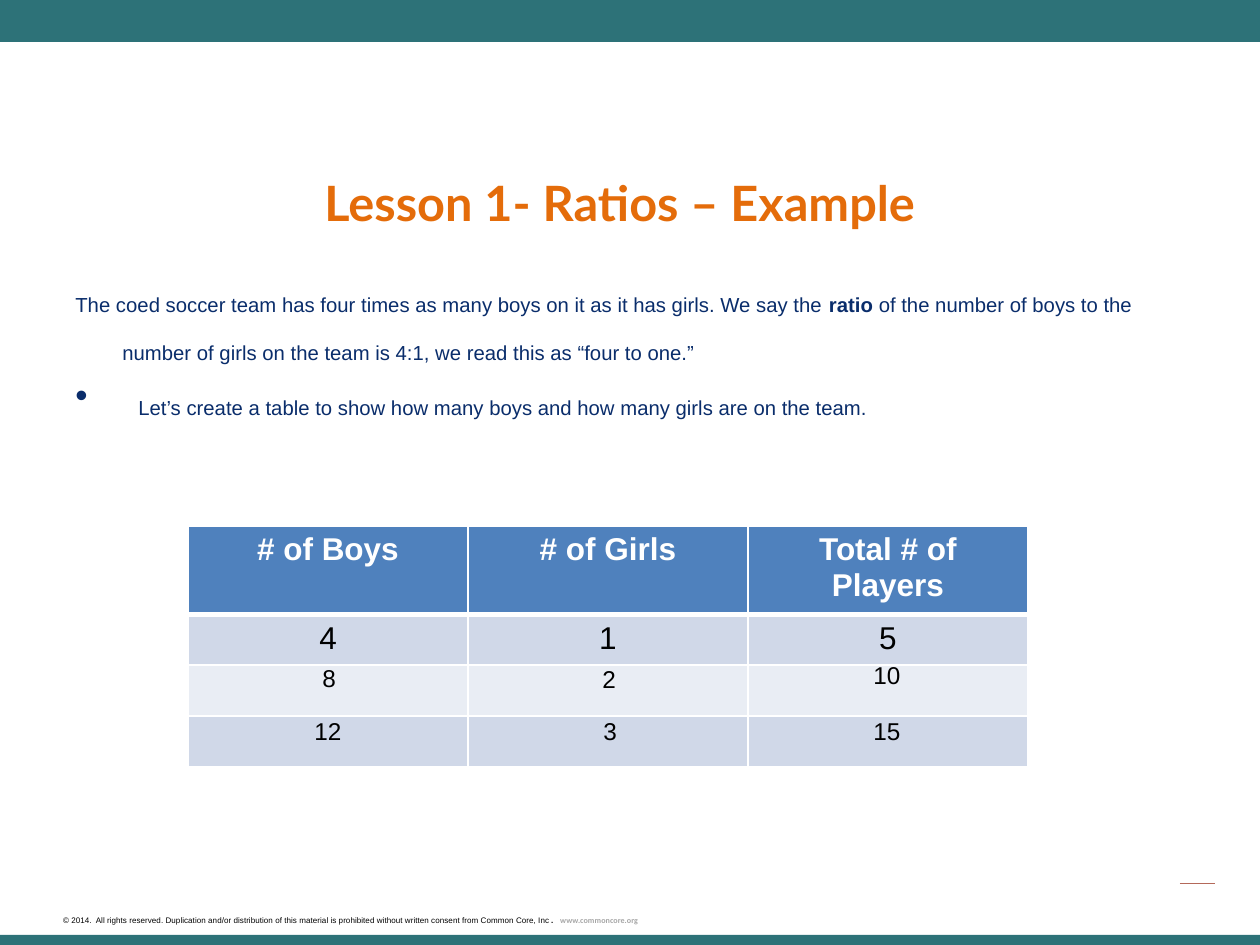
import pptx
import pptx.util
import pptx.dml.color
import pptx.enum.shapes
import pptx.enum.text
import pptx.oxml
import pptx.oxml.ns

EMU_PER_PX = 914400 / 126
TEAL, ORANGE, NAVY = "2D7278", "E46C0A", "0A2D6B"
BLACK, WHITE, GRAY = "000000", "FFFFFF", "A6A6A6"
HEADER_FILL, BAND_FILLS = "4F81BD", ("D0D8E8", "E9EDF4")
SUBSCRIPT = "-25000"
HEADINGS = ("# of Boys", "# of Girls", "Total # of Players")
FIRST_RATIO = ("4", "1", "5")
LATER_RATIOS = (
    ("8", 310, 629), ("2", 590, 630), ("10", 861, 626),
    ("12", 302, 682), ("3", 591, 682), ("15", 861, 682),
)


def px(length):
    """Turn pixels into EMU."""
    return pptx.util.Emu(round(length * EMU_PER_PX))


def color(value):
    """Turn a hex string into a colour."""
    return pptx.dml.color.RGBColor.from_string(value)


def element(tag, **attributes):
    """Make a drawing element with the given attributes."""
    made = pptx.oxml.parse_xml(f"<a:{tag} {pptx.oxml.ns.nsdecls('a')}/>")
    for key, value in attributes.items():
        made.set(key, str(value))
    return made


def style(run, size, font, hue, bold=False, lowered=True):
    """Format one run of text."""
    run.font.size = pptx.util.Pt(size)
    run.font.name = font
    run.font.color.rgb = color(hue)
    run.font.bold = bold
    if lowered:
        run.font._element.set("baseline", SUBSCRIPT)


def add_run(paragraph, text, *look, **options):
    """Append a formatted run to a paragraph."""
    run = paragraph.add_run()
    run.text = text
    style(run, *look, **options)


def add_text_frame(slide, left, top, width, height):
    """Add a wrapping text box and return its frame."""
    frame = slide.shapes.add_textbox(px(left), px(top), px(width), px(height)).text_frame
    frame.word_wrap = True
    return frame


def add_bar(slide, left, top, width, height):
    """Add a plain teal bar."""
    bar = slide.shapes.add_shape(
        pptx.enum.shapes.MSO_SHAPE.RECTANGLE, px(left), px(top), px(width), px(height))
    bar.shadow.inherit = False
    bar.fill.solid()
    bar.fill.fore_color.rgb = color(TEAL)
    bar.line.fill.background()


def add_page_rule(slide, left, top, width):
    """Add the short rule at the lower right."""
    rule = slide.shapes.add_connector(
        pptx.enum.shapes.MSO_CONNECTOR.STRAIGHT, px(left), px(top), px(left + width), px(top))
    rule.line.color.rgb = color("B4695A")
    rule.line.width = pptx.util.Pt(0.5)
    rule._element.spPr.append(element("effectLst"))


def add_copyright(slide, left, top, width, height):
    """Add the copyright line."""
    frame = add_text_frame(slide, left, top, width, height)
    frame.margin_left = frame.margin_right = frame.margin_top = frame.margin_bottom = 0
    line = frame.paragraphs[0]
    add_run(line, "© 2014.  All rights reserved. Duplication and/or distribution of this material "
            "is prohibited without written consent from Common Core, Inc", 8, "Arial", BLACK)
    add_run(line, ".   ", 8, "Arial", BLACK, bold=True)
    add_run(line, "www.commoncore.org", 8, "Calibri", GRAY, bold=True)


def place_title(slide, left, top, width, height):
    """Move and format the title placeholder."""
    title = slide.shapes.title
    title.left, title.top, title.width, title.height = map(px, (left, top, width, height))
    title.text_frame.text = "Lesson 1- Ratios – Example "
    title.text_frame.vertical_anchor = pptx.enum.text.MSO_ANCHOR.MIDDLE
    heading = title.text_frame.paragraphs[0]
    heading.alignment = pptx.enum.text.PP_ALIGN.CENTER
    style(heading.runs[0], 48, "Lato", ORANGE, bold=True)


def add_problem(slide, left, top, width, height):
    """Add the word problem and its bulleted task."""
    frame = add_text_frame(slide, left, top, width, height)
    problem, task = frame.paragraphs[0], frame.add_paragraph()
    for paragraph in (problem, task):
        properties = paragraph._p.get_or_add_pPr()
        properties.set("marL", str(px(47)))
        properties.set("indent", str(-px(47)))
    task.space_before = pptx.util.Pt(4)
    bullet_properties = task._p.get_or_add_pPr()
    bullet_properties.append(element("buFont", typeface="Arial"))
    bullet_properties.append(element("buChar", char="•"))
    tabs = element("tabLst")
    tabs.append(element("tab", pos=px(63), algn="l"))
    bullet_properties.append(tabs)

    look = (20, "Arial", NAVY)
    add_run(problem, "The coed soccer team has four times as many boys on it as it has girls. "
            "We say the ", *look)
    add_run(problem, "ratio", *look, bold=True)
    add_run(problem, " of the number of boys to the number of girls on the team is 4:1, "
            "we read this as “four to one.”", *look)
    add_run(task, "\tLet’s create a table to show how many boys and how many girls "
            "are on the team.", *look)


def add_borders(cell, row):
    """Draw white cell borders, heavier under the header row."""
    widths = {"lnL": 1, "lnR": 1, "lnT": 3 if row == 1 else 1, "lnB": 3 if row == 0 else 1}
    for side, width in widths.items():
        line = element(side, w=pptx.util.Pt(width))
        fill = element("solidFill")
        fill.append(element("srgbClr", val=WHITE))
        line.append(fill)
        cell._tc.get_or_add_tcPr().append(line)


def add_ratio_table(slide, left, top, width, row_heights):
    """Add the table of boys, girls and players."""
    table = slide.shapes.add_table(
        len(row_heights), len(HEADINGS), px(left), px(top), px(width), px(sum(row_heights))).table
    for column in table.columns:
        column.width = px(width / len(HEADINGS))
    for row, height in enumerate(row_heights):
        table.rows[row].height = px(height)
        for column in range(len(HEADINGS)):
            cell = table.cell(row, column)
            add_borders(cell, row)
            cell.fill.solid()
            cell.fill.fore_color.rgb = color(BAND_FILLS[(row - 1) % 2] if row else HEADER_FILL)
            if row < 2:
                cell.text_frame.text = (HEADINGS, FIRST_RATIO)[row][column]
                entry = cell.text_frame.paragraphs[0]
                entry.alignment = pptx.enum.text.PP_ALIGN.CENTER
                style(entry.runs[0], 18, "Arial", BLACK if row else WHITE,
                      bold=row == 0, lowered=False)


def add_later_ratio(slide, number, left, top, width=72, height=47):
    """Add one number laid over the lower table rows."""
    frame = add_text_frame(slide, left, top, width, height)
    add_run(frame.paragraphs[0], number, 24, "Arial", BLACK)


def main():
    """Build and save the lesson slide."""
    deck = pptx.Presentation()
    deck.slide_width, deck.slide_height = px(1260), px(945)
    slide = deck.slides.add_slide(deck.slide_layouts[5])
    add_bar(slide, 0, 0, 1260, 42)
    add_bar(slide, 0, 935, 1260, 21)
    add_page_rule(slide, 1180, 883, 35)
    add_copyright(slide, 63, 906, 761, 16)
    place_title(slide, 59, 117, 1134, 113)
    add_problem(slide, 63, 263, 1134, 554)
    add_ratio_table(slide, 188, 526, 840, (87, 51, 51, 51))
    for number, left, top in LATER_RATIOS:
        add_later_ratio(slide, number, left, top)
    deck.save("out.pptx")


if __name__ == "__main__":
    main()
